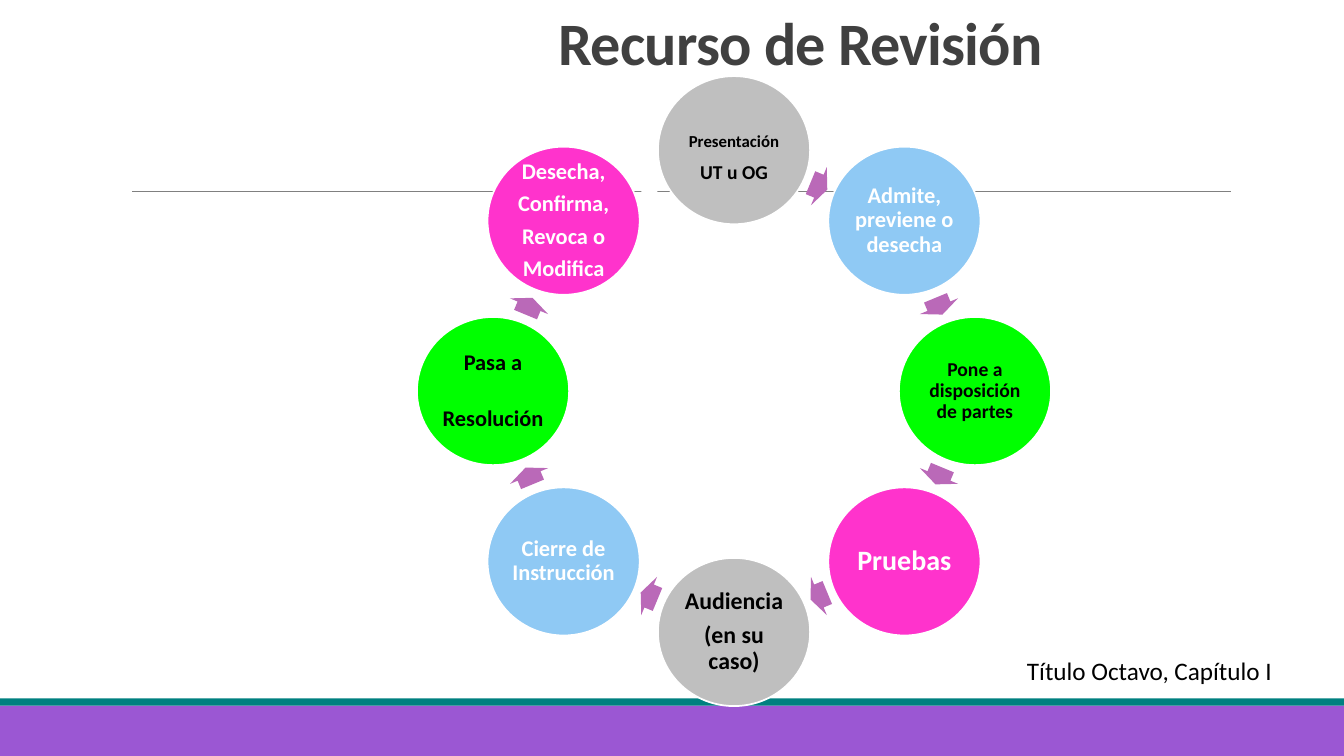
from math import cos, radians, sin

from lxml import etree
from pptx import Presentation
from pptx.dml.color import RGBColor
from pptx.enum.shapes import MSO_CONNECTOR, MSO_SHAPE
from pptx.enum.text import MSO_ANCHOR, MSO_AUTO_SIZE, PP_ALIGN
from pptx.oxml.ns import qn
from pptx.util import Inches, Pt

OVAL, RECTANGLE, ARROW = MSO_SHAPE.OVAL, MSO_SHAPE.RECTANGLE, MSO_SHAPE.RIGHT_ARROW
STRAIGHT = MSO_CONNECTOR.STRAIGHT
MIDDLE, BOTTOM = MSO_ANCHOR.MIDDLE, MSO_ANCHOR.BOTTOM
CENTER = PP_ALIGN.CENTER
NO_AUTOFIT = MSO_AUTO_SIZE.NONE

# Content
TITLE = "Recurso de Revisión"
REFERENCE = "Título Octavo, Capítulo I"
BLACK, WHITE = "000000", "FFFFFF"
GRAY, BLUE, GREEN, PINK, MAUVE = "BFBFBF", "8FC9F4", "00FF00", "FF33CC", "BA69B8"
# Clockwise from the top: lines with sizes, fill, text colour, gap after a line (pt),
# top inset (inches), colour of the arrow to the next step
STEPS = [
    ([("Presentación", 12), ("UT u OG", 14)], GRAY, BLACK, 7.8, 0.18, MAUVE),
    ([("Admite, previene o desecha", 16)], BLUE, WHITE, 0, 0.02, MAUVE),
    ([("Pone a disposición de partes", 14)], GREEN, BLACK, 0, 0.02, MAUVE),
    ([("Pruebas", 20)], PINK, WHITE, 0, 0.02, MAUVE),
    ([("Audiencia", 17), ("(en su caso)", 17)], GRAY, BLACK, 6, 0.02, MAUVE),
    ([("Cierre de Instrucción", 16)], BLUE, WHITE, 0, 0.02, MAUVE),
    ([("Pasa a", 16), ("Resolución", 16)], GREEN, BLACK, 23, 0.02, MAUVE),
    ([("Desecha,", 16), ("Confirma,", 16), ("Revoca o", 16), ("Modifica", 16)],
     PINK, WHITE, 5.7, 0.02, WHITE),
]

# Layout, in inches
SLIDE_W, SLIDE_H = 13.33, 7.5
CENTER_X, CENTER_Y = 7.28, 3.88
STEP_RADIUS, ARROW_RADIUS = 2.39, 2.2
STEP_W, STEP_H = 1.51, 1.47
ARROW_W, ARROW_H = 0.18, 0.41
TURN = 360 / len(STEPS)

prs = Presentation()
prs.slide_width, prs.slide_height = Inches(SLIDE_W), Inches(SLIDE_H)
slide = prs.slides.add_slide(prs.slide_layouts[5])


def rgb(color):
    return RGBColor.from_string(color)


def add_filled(kind, left, top, width, height, fill):
    shape = slide.shapes.add_shape(
        kind, Inches(left), Inches(top), Inches(width), Inches(height))
    shape.shadow.inherit = False
    shape.fill.solid()
    shape.fill.fore_color.rgb = rgb(fill)
    shape.line.fill.background()
    return shape


def add_on_ring(kind, angle, radius, width, height, fill):
    """Centre a shape on the ring, at degrees clockwise from the top."""
    x = CENTER_X + radius * sin(radians(angle))
    y = CENTER_Y - radius * cos(radians(angle))
    return add_filled(kind, x - width / 2, y - height / 2, width, height, fill)


def write(paragraph, text, size, color, bold=True, spacing=0.9):
    paragraph.alignment = CENTER
    paragraph.line_spacing = spacing
    run = paragraph.add_run()
    run.text = text
    run.font.name, run.font.size, run.font.bold = "Calibri", Pt(size), bold
    run.font.color.rgb = rgb(color)
    return run


# Bottom bands and rule
add_filled(RECTANGLE, 0, 7, SLIDE_W, 0.5, "9B57D3")
add_filled(RECTANGLE, 0, 6.93, SLIDE_W, 0.07, "008080")
rule = slide.shapes.add_connector(
    STRAIGHT, Inches(1.31), Inches(1.9), Inches(12.21), Inches(1.9))
rule.line.color.rgb = rgb("808080")
rule.line.width = Pt(0.5)
etree.SubElement(rule.element.spPr, qn("a:effectLst"))

# Title
title = slide.shapes.title
title.left, title.top = Inches(2.7), Inches(-0.03)
title.width, title.height = Inches(10.48), Inches(0.85)
title_frame = title.text_frame
title_frame.auto_size = NO_AUTOFIT
title_frame.word_wrap = True
title_frame.vertical_anchor = BOTTOM
title_run = write(title_frame.paragraphs[0], TITLE, 43, "404040", spacing=0.85)
title_run.font._element.set("spc", "-50")

# Reference to the law
reference = slide.shapes.add_textbox(Inches(9.94), Inches(6.45), Inches(2.92), Inches(0.4))
reference.text_frame.word_wrap = True
write(reference.text_frame.paragraphs[0], REFERENCE, 18, BLACK, bold=False, spacing=1.0)

# Cycle of steps and arrows
for i, (lines, fill, color, gap, top_inset, arrow_fill) in enumerate(STEPS):
    step = add_on_ring(OVAL, i * TURN, STEP_RADIUS, STEP_W, STEP_H, fill)
    step.line.color.rgb = rgb(WHITE)
    step.line.width = Pt(1.25)
    frame = step.text_frame
    frame.word_wrap = True
    frame.vertical_anchor = MIDDLE
    frame.margin_left = frame.margin_right = frame.margin_bottom = Inches(0.02)
    frame.margin_top = Inches(top_inset)
    for n, (text, size) in enumerate(lines):
        paragraph = frame.add_paragraph() if n else frame.paragraphs[0]
        write(paragraph, text, size, color)
        if n < len(lines) - 1:
            paragraph.space_after = Pt(gap)

    arrow_angle = (i + 0.5) * TURN
    arrow = add_on_ring(ARROW, arrow_angle, ARROW_RADIUS, ARROW_W, ARROW_H, arrow_fill)
    arrow.rotation = arrow_angle
    arrow.adjustments[0], arrow.adjustments[1] = 0.6, 0.5

prs.save("out.pptx")
